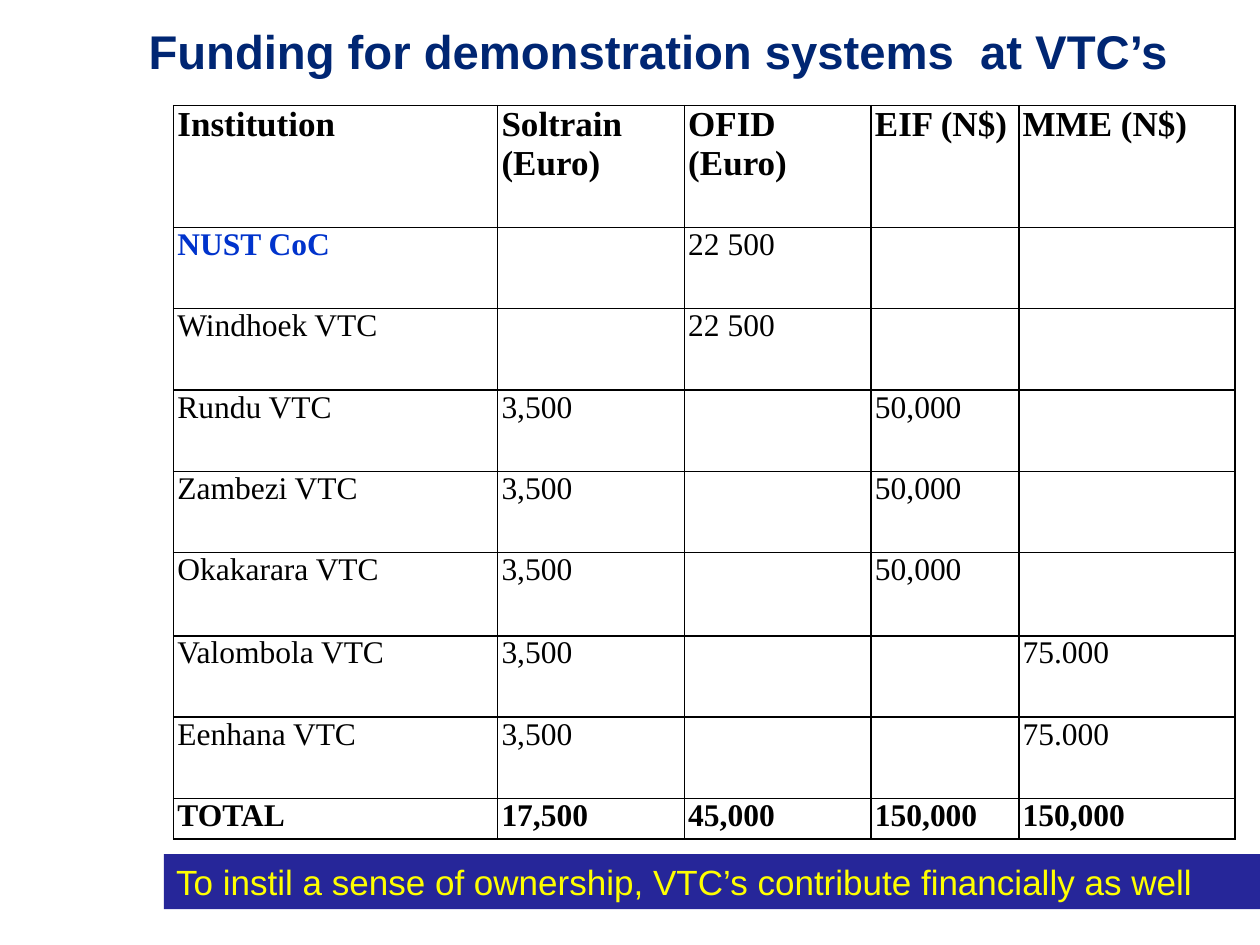
from lxml import etree
from pptx import Presentation
from pptx.dml.color import RGBColor
from pptx.enum import shapes, text
from pptx.oxml import ns
from pptx.util import Pt

NAVY = RGBColor(0x00, 0x26, 0x73)
BLUE = RGBColor(0x00, 0x33, 0xCC)
BAND = RGBColor(0x26, 0x26, 0x99)
YELLOW = RGBColor(0xFF, 0xFF, 0x00)
BLACK = RGBColor(0, 0, 0)

TITLE = "Funding for demonstration systems  at VTC’s"
NOTE = "To instil a sense of ownership, VTC’s contribute financially as well"
ROWS = [
    ("Institution", "Soltrain (Euro)", "OFID (Euro)", "EIF (N$)", "MME (N$)"),
    ("NUST CoC", "", "22 500", "", ""),
    ("Windhoek VTC", "", "22 500", "", ""),
    ("Rundu VTC", "3,500", "", "50,000", ""),
    ("Zambezi VTC", "3,500", "", "50,000", ""),
    ("Okakarara VTC", "3,500", "", "50,000", ""),
    ("Valombola VTC", "3,500", "", "", "75.000"),
    ("Eenhana VTC", "3,500", "", "", "75.000"),
    ("TOTAL", "17,500", "45,000", "150,000", "150,000"),
]
COL_WIDTHS = [185.2, 106.7, 106.7, 84.4, 123.6]
ROW_HEIGHTS = [69.6] + [46.5] * 4 + [47.5] + [46.5] * 2 + [23.2]


def style(p, size, color, name, bold=False):
    p.font.size = Pt(size)
    p.font.color.rgb = color
    p.font.name = name
    p.font.bold = bold


def add_borders(cell):
    tc_pr = cell._tc.get_or_add_tcPr()
    for side in ("a:lnL", "a:lnR", "a:lnT", "a:lnB"):
        ln = etree.SubElement(tc_pr, ns.qn(side), w=str(Pt(1)))
        fill = etree.SubElement(ln, ns.qn("a:solidFill"))
        etree.SubElement(fill, ns.qn("a:srgbClr"), val=str(BLACK))


def add_title(s):
    tf = s.shapes.add_textbox(Pt(77.8), Pt(3.6), Pt(612), Pt(51.1)).text_frame
    tf.word_wrap = True
    tf.vertical_anchor = text.MSO_ANCHOR.MIDDLE
    p = tf.paragraphs[0]
    p.text = TITLE
    style(p, 27, NAVY, "Arial", True)


def add_funding_table(s):
    frame = s.shapes.add_table(len(ROWS), len(COL_WIDTHS), Pt(99.2), Pt(60.3),
                               Pt(sum(COL_WIDTHS)), Pt(sum(ROW_HEIGHTS)))
    table = frame.table
    table.first_row = table.horz_banding = False
    for column, width in zip(table.columns, COL_WIDTHS):
        column.width = Pt(width)
    for i, (row, height) in enumerate(zip(table.rows, ROW_HEIGHTS)):
        row.height = Pt(height)
        for j, cell in enumerate(row.cells):
            cell.margin_left = cell.margin_right = Pt(2.2)
            cell.margin_top = cell.margin_bottom = 0
            add_borders(cell)
            cell.fill.background()
            p = cell.text_frame.paragraphs[0]
            p.text = ROWS[i][j]
            partner = (i, j) == (1, 0)
            style(p, 20 if i == 0 else 18, BLUE if partner else BLACK,
                  "Times New Roman", partner or i in (0, len(ROWS) - 1))


def add_note(s):
    sp = s.shapes.add_shape(shapes.MSO_SHAPE.RECTANGLE,
                            Pt(93.6), Pt(488), Pt(626.4), Pt(31.5))
    sp.shadow.inherit = False
    sp.fill.solid()
    sp.fill.fore_color.rgb = BAND
    sp.line.fill.background()
    sp.text_frame.word_wrap = True
    p = sp.text_frame.paragraphs[0]
    p.text = NOTE
    p.alignment = text.PP_ALIGN.JUSTIFY
    style(p, 20, YELLOW, "Arial")


def main():
    prs = Presentation()
    prs.slide_width, prs.slide_height = Pt(720), Pt(540)
    s = prs.slides.add_slide(prs.slide_layouts[6])
    add_title(s)
    add_funding_table(s)
    add_note(s)
    prs.save("out.pptx")


if __name__ == "__main__":
    main()
